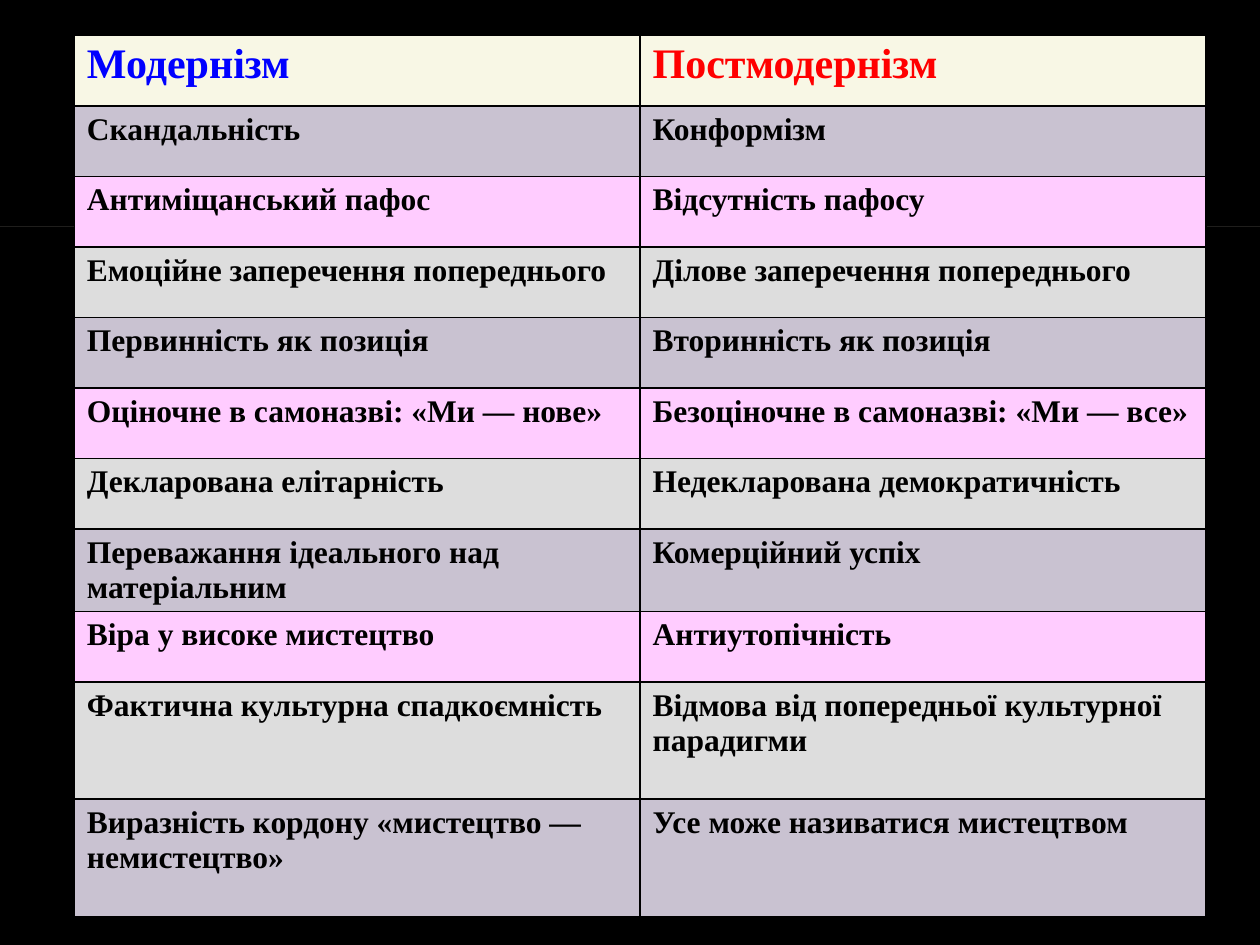
from itertools import cycle

from lxml import etree
from pptx import Presentation
from pptx.dml.color import RGBColor
from pptx.enum.shapes import MSO_SHAPE
from pptx.oxml.ns import qn
from pptx.util import Inches, Pt

RECTANGLE = MSO_SHAPE.RECTANGLE

BLACK = RGBColor(0x00, 0x00, 0x00)
BLUE = RGBColor(0x00, 0x00, 0xFF)
RED = RGBColor(0xFF, 0x00, 0x00)
CREAM = RGBColor(0xF8, 0xF7, 0xE5)
MAUVE = RGBColor(0xC9, 0xC2, 0xD1)
PINK = RGBColor(0xFF, 0xCC, 0xFF)
GREY = RGBColor(0xDD, 0xDD, 0xDD)

FONT = "Times New Roman"
HEADINGS = [("Модернізм", BLUE), ("Постмодернізм", RED)]
COMPARISONS = [
    ("Скандальність", "Конформізм"),
    ("Антиміщанський пафос", "Відсутність пафосу"),
    ("Емоційне заперечення попереднього", "Ділове заперечення попереднього"),
    ("Первинність як позиція", "Вторинність як позиція"),
    ("Оціночне в самоназві: «Ми — нове»", "Безоціночне в самоназві: «Ми — все»"),
    ("Декларована елітарність", "Недекларована демократичність"),
    ("Переважання ідеального над матеріальним", "Комерційний успіх"),
    ("Віра у високе мистецтво", "Антиутопічність"),
    ("Фактична культурна спадкоємність",
     "Відмова від попередньої культурної\nпарадигми"),
    ("Виразність кордону «мистецтво —\nнемистецтво»",
     "Усе може називатися мистецтвом"),
]
COLUMN_WIDTH = 4.49
ROW_HEIGHTS = [0.56] * 9 + [0.93] * 2


def set_borders(cell, color, width):
    properties = cell._tc.get_or_add_tcPr()
    for position, side in enumerate(("a:lnL", "a:lnR", "a:lnT", "a:lnB")):
        line = etree.Element(qn(side), w=str(Pt(width)))
        fill = etree.SubElement(line, qn("a:solidFill"))
        etree.SubElement(fill, qn("a:srgbClr"), val=str(color))
        properties.insert(position, line)


def fill_cell(cell, text, size, color, background):
    cell.fill.solid()
    cell.fill.fore_color.rgb = background
    set_borders(cell, BLACK, 1)
    cell.text = text
    for para in cell.text_frame.paragraphs:
        para.font.name = FONT
        para.font.size = Pt(size)
        para.font.bold = True
        para.font.color.rgb = color


def add_hairline(page):
    hairline = page.shapes.add_shape(
        RECTANGLE, Inches(0), Inches(1.8), Inches(10), Inches(0))
    hairline.shadow.inherit = False
    hairline.fill.solid()
    hairline.fill.fore_color.rgb = CREAM
    hairline.line.fill.background()


def add_comparison_table(page):
    table = page.shapes.add_table(
        len(ROW_HEIGHTS), len(HEADINGS), Inches(0.59), Inches(0.28),
        Inches(COLUMN_WIDTH * len(HEADINGS)), Inches(sum(ROW_HEIGHTS))).table
    for column in table.columns:
        column.width = Inches(COLUMN_WIDTH)
    for row, height in zip(table.rows, ROW_HEIGHTS):
        row.height = Inches(height)

    # Heading row
    for column, (heading, color) in enumerate(HEADINGS):
        fill_cell(table.cell(0, column), heading, 24, color, CREAM)

    # Body rows, in three repeating background colours
    backgrounds = cycle((MAUVE, PINK, GREY))
    for row, (traits, background) in enumerate(zip(COMPARISONS, backgrounds), 1):
        for column, trait in enumerate(traits):
            fill_cell(table.cell(row, column), trait, 18, BLACK, background)


def main():
    deck = Presentation()
    deck.slide_width = Inches(10)
    deck.slide_height = Inches(7.5)
    page = deck.slides.add_slide(deck.slide_layouts[6])
    page.background.fill.solid()
    page.background.fill.fore_color.rgb = BLACK

    add_hairline(page)
    add_comparison_table(page)
    deck.save("out.pptx")


if __name__ == "__main__":
    main()
